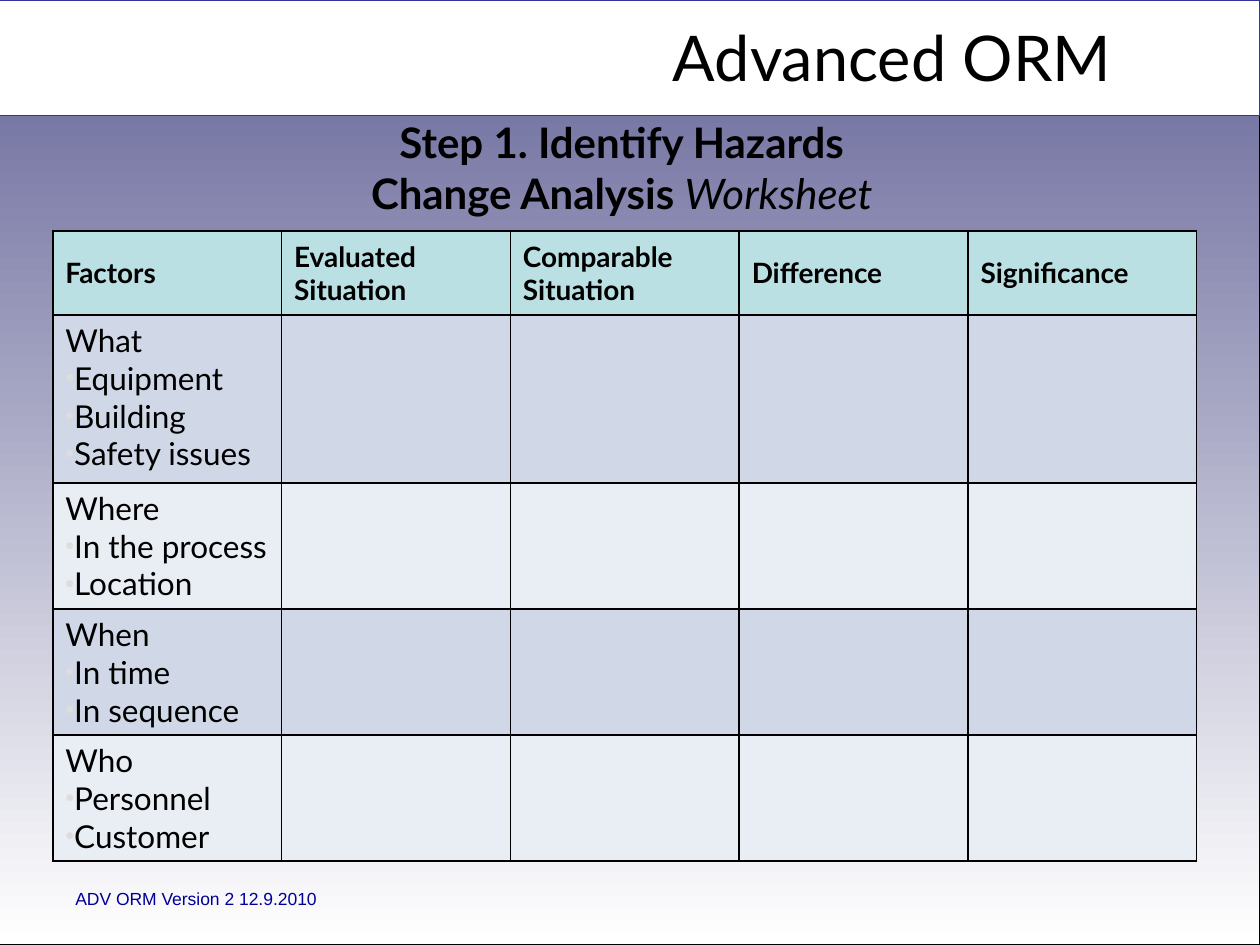
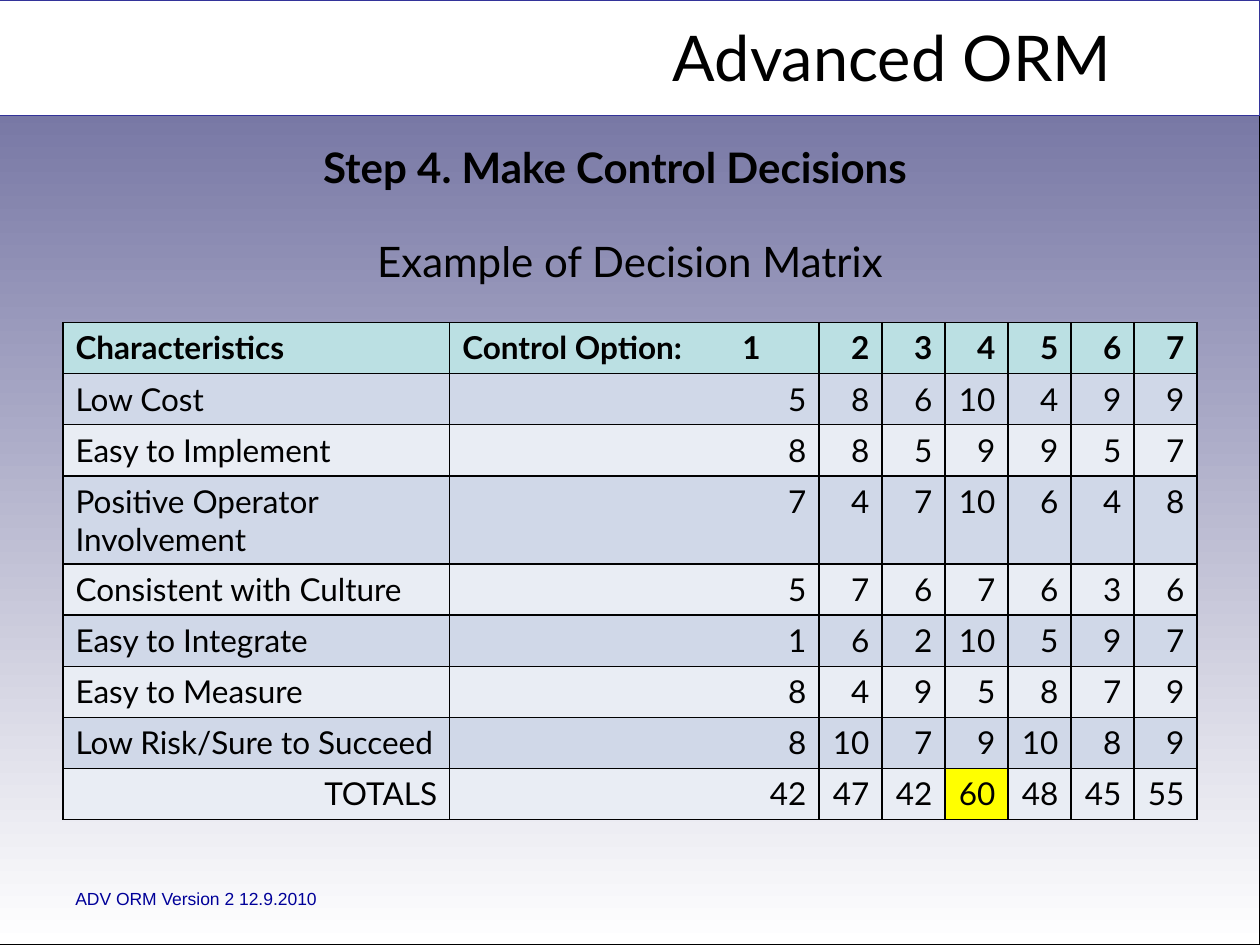
from lxml.etree import SubElement
from pptx import Presentation
from pptx.dml.color import RGBColor
from pptx.enum.shapes import MSO_SHAPE
from pptx.enum.text import MSO_ANCHOR, MSO_AUTO_SIZE, PP_ALIGN
from pptx.oxml.ns import qn
from pptx.util import Pt

# Shared look
BLACK = RGBColor(0x00, 0x00, 0x00)
WHITE = RGBColor(0xFF, 0xFF, 0xFF)
SLATE = RGBColor(0x66, 0x66, 0x99)
BAND_EDGE = RGBColor(0x33, 0x33, 0x99)
FOOTER_BLUE = RGBColor(0x00, 0x00, 0x99)
HEADER_FILL = RGBColor(0xBB, 0xE0, 0xE3)
ROW_FILLS = [RGBColor(0xD0, 0xD8, 0xE8), RGBColor(0xE9, 0xED, 0xF4)]
BEST_FILL = RGBColor(0xFF, 0xFF, 0x00)
BULLET_GREY = RGBColor(0xDD, 0xDD, 0xDD)

BASE_FONT = dict(name="Lato", size=Pt(18), bold=False, italic=False)
HEAD_FONT = dict(size=Pt(24), bold=True)
PLAIN_FONT = dict(size=Pt(24))

# Slide content
FACTOR_HEADS = ["Factors", "Evaluated\nSituation", "Comparable\nSituation",
                "Difference", "Significance"]
FACTORS = [
    ("What", ["Equipment", "Building", "Safety issues"]),
    ("Where", ["In the process", "Location"]),
    ("When", ["In time", "In sequence"]),
    ("Who", ["Personnel", "Customer"]),
]
OPTION_HEADS = ["Characteristics", "Control Option:\t1", *"234567"]
SCORES = [
    ("Low Cost", [5, 8, 6, 10, 4, 9, 9]),
    ("Easy to Implement", [8, 8, 5, 9, 9, 5, 7]),
    ("Positive Operator Involvement", [7, 4, 7, 10, 6, 4, 8]),
    ("Consistent with Culture", [5, 7, 6, 7, 6, 3, 6]),
    ("Easy to Integrate", [1, 6, 2, 10, 5, 9, 7]),
    ("Easy to Measure", [8, 4, 9, 5, 8, 7, 9]),
    ("Low Risk/Sure to Succeed", [8, 10, 7, 9, 10, 8, 9]),
]


# Text helpers
def add_run(p, text, color=BLACK, **font):
    r = p.add_run()
    r.text = text
    for key, value in {**BASE_FONT, **font}.items():
        setattr(r.font, key, value)
    r.font.color.rgb = color


def add_bullet(p):
    pPr = p._p.get_or_add_pPr()
    color = SubElement(pPr, qn("a:buClr"))
    SubElement(color, qn("a:srgbClr"), val=str(BULLET_GREY))
    SubElement(pPr, qn("a:buSzPct"), val="80000")
    SubElement(pPr, qn("a:buFont"), typeface="Arial")
    SubElement(pPr, qn("a:buChar"), char="•")


def add_tab(p, position):
    tabs = SubElement(p._p.get_or_add_pPr(), qn("a:tabLst"))
    SubElement(tabs, qn("a:tab"), pos=str(position), algn="l")


def place(sp, box):
    for key, value in zip(("left", "top", "width", "height"), box):
        setattr(sp, key, Pt(value))


def set_frame(tf, anchor):
    settings = dict(word_wrap=True, auto_size=MSO_AUTO_SIZE.NONE,
                    vertical_anchor=anchor)
    for key, value in settings.items():
        setattr(tf, key, value)
    return tf.paragraphs[0]


# Backdrop, heading and footer, kept on the master
def add_panel(s, box, edge):
    sp = s.shapes.add_shape(MSO_SHAPE.RECTANGLE, *map(Pt, box))
    sp.shadow.inherit = False
    sp.line.color.rgb = edge
    sp.line.width = Pt(0.75)
    return sp


def build_master(prs, s):
    page = add_panel(s, (-8.64, 0, 728.64, 540), BLACK)
    page.fill.gradient()
    page.fill.gradient_angle = 270
    for stop, color in zip(page.fill.gradient_stops, (SLATE, WHITE)):
        stop.color.rgb = color
    band = add_panel(s, (-8.64, 0, 728.64, 66), BAND_EDGE)
    band.fill.solid()
    band.fill.fore_color.rgb = WHITE

    heading = s.shapes.add_textbox(Pt(299.5), Pt(11.5), Pt(420.5), Pt(41))
    p = set_frame(heading.text_frame, MSO_ANCHOR.MIDDLE)
    p.alignment = PP_ALIGN.CENTER
    add_run(p, "Advanced ORM", size=Pt(36))

    footer = s.shapes.add_textbox(Pt(36), Pt(504), Pt(576), Pt(19.5))
    p = set_frame(footer.text_frame, MSO_ANCHOR.TOP)
    footer.text_frame.auto_size = MSO_AUTO_SIZE.SHAPE_TO_FIT_TEXT
    add_run(p, "ADV ORM Version 2 12.9.2010", FOOTER_BLUE,
            name="Arial", size=Pt(10))

    for number, sp in enumerate((page, band, heading, footer), 101):
        sp.element.xpath(".//p:cNvPr")[0].set("id", str(number))
        prs.slide_master.shapes.element.append(sp.element)


def add_title(s, box):
    place(s.shapes.title, box)
    p = set_frame(s.shapes.title.text_frame, MSO_ANCHOR.MIDDLE)
    p.alignment = PP_ALIGN.CENTER
    return p


# Tables
def add_grid(s, box, widths, heights):
    table = s.shapes.add_table(len(heights), len(widths),
                               *map(Pt, box)).table
    table.first_row = table.horz_banding = False
    for column, width in zip(table.columns, widths):
        column.width = Pt(width)
    for i, (row, height) in enumerate(zip(table.rows, heights)):
        row.height = Pt(height)
        for cell in row.cells:
            add_borders(cell)
            cell.fill.solid()
            cell.fill.fore_color.rgb = (ROW_FILLS[(i - 1) % 2] if i
                                        else HEADER_FILL)
    return table


def add_borders(cell):
    tcPr = cell._tc.get_or_add_tcPr()
    for side in ("lnL", "lnR", "lnT", "lnB"):
        ln = SubElement(tcPr, qn(f"a:{side}"), w=str(Pt(1)))
        fill = SubElement(ln, qn("a:solidFill"))
        SubElement(fill, qn("a:srgbClr"), val=str(BLACK))


def write_cell(cell, lines, align=PP_ALIGN.LEFT, bullets=False, **font):
    tf = cell.text_frame
    for i, line in enumerate(lines):
        p = tf.add_paragraph() if i else tf.paragraphs[0]
        if bullets and i:
            add_bullet(p)
        if "\t" in line:
            add_tab(p, Pt(160))
        p.alignment = align
        add_run(p, line, **font)


def add_factor_table(s, box):
    left, top, width, height = box
    columns = len(FACTOR_HEADS)
    table = add_grid(s, box, [width / columns] * columns,
                     [48, 96, 72, 72, 72])
    for c, head in enumerate(FACTOR_HEADS):
        cell = table.cell(0, c)
        cell.vertical_anchor = MSO_ANCHOR.MIDDLE
        write_cell(cell, head.split("\n"), size=Pt(16), bold=True)
    for i, (factor, items) in enumerate(FACTORS, 1):
        write_cell(table.cell(i, 0), [factor, *items], bullets=True)


def add_score_table(s, box):
    left, top, width, height = box
    totals = [sum(column) for column in zip(*(row for _, row in SCORES))]
    rows = [*SCORES, ("TOTALS", totals)]
    table = add_grid(s, box, [221, width - 221 - 6 * 36] + [36] * 6,
                     [height / (len(rows) + 1)] * (len(rows) + 1))
    for c, head in enumerate(OPTION_HEADS):
        write_cell(table.cell(0, c), [head], bold=True,
                   align=PP_ALIGN.RIGHT if c > 1 else PP_ALIGN.LEFT)
    for i, (label, values) in enumerate(rows, 1):
        is_total = i == len(rows)
        write_cell(table.cell(i, 0), [label],
                   PP_ALIGN.RIGHT if is_total else PP_ALIGN.LEFT)
        for c, value in enumerate(values, 1):
            write_cell(table.cell(i, c), [str(value)], PP_ALIGN.RIGHT)
    best = table.cell(len(rows), 1 + totals.index(max(totals)))
    best.fill.fore_color.rgb = BEST_FILL


# Slides
def build_worksheet(s):
    p = add_title(s, (17.3, 74.2, 676, 42.5))
    add_run(p, "Step 1. Identify Hazards", **HEAD_FONT)
    p.add_line_break()
    add_run(p, "Change Analysis ", **HEAD_FONT)
    add_run(p, "Worksheet", **PLAIN_FONT | dict(italic=True))
    add_factor_table(s, (30.2, 132, 653.75, 360))


def build_matrix(s):
    body = s.placeholders[1]
    place(body, (36, 131, 648, 362))
    p = set_frame(body.text_frame, MSO_ANCHOR.TOP)
    pPr = p._p.get_or_add_pPr()
    for key in ("marL", "indent"):
        pPr.set(key, "0")
    SubElement(pPr, qn("a:buNone"))
    p.alignment = PP_ALIGN.CENTER
    p.space_before = Pt(0)
    add_run(p, "Example of Decision Matrix", **PLAIN_FONT)

    p = add_title(s, (31.7, 74.2, 639.4, 42.5))
    add_run(p, "Step 4. Make Control Decisions", **HEAD_FONT)
    add_score_table(s, (36, 184.3, 648, 262.8))


def main():
    prs = Presentation()
    prs.slide_width, prs.slide_height = Pt(720), Pt(540)
    worksheet = prs.slides.add_slide(prs.slide_layouts[5])
    build_master(prs, worksheet)
    build_worksheet(worksheet)
    build_matrix(prs.slides.add_slide(prs.slide_layouts[1]))
    prs.save("out.pptx")


if __name__ == "__main__":
    main()
